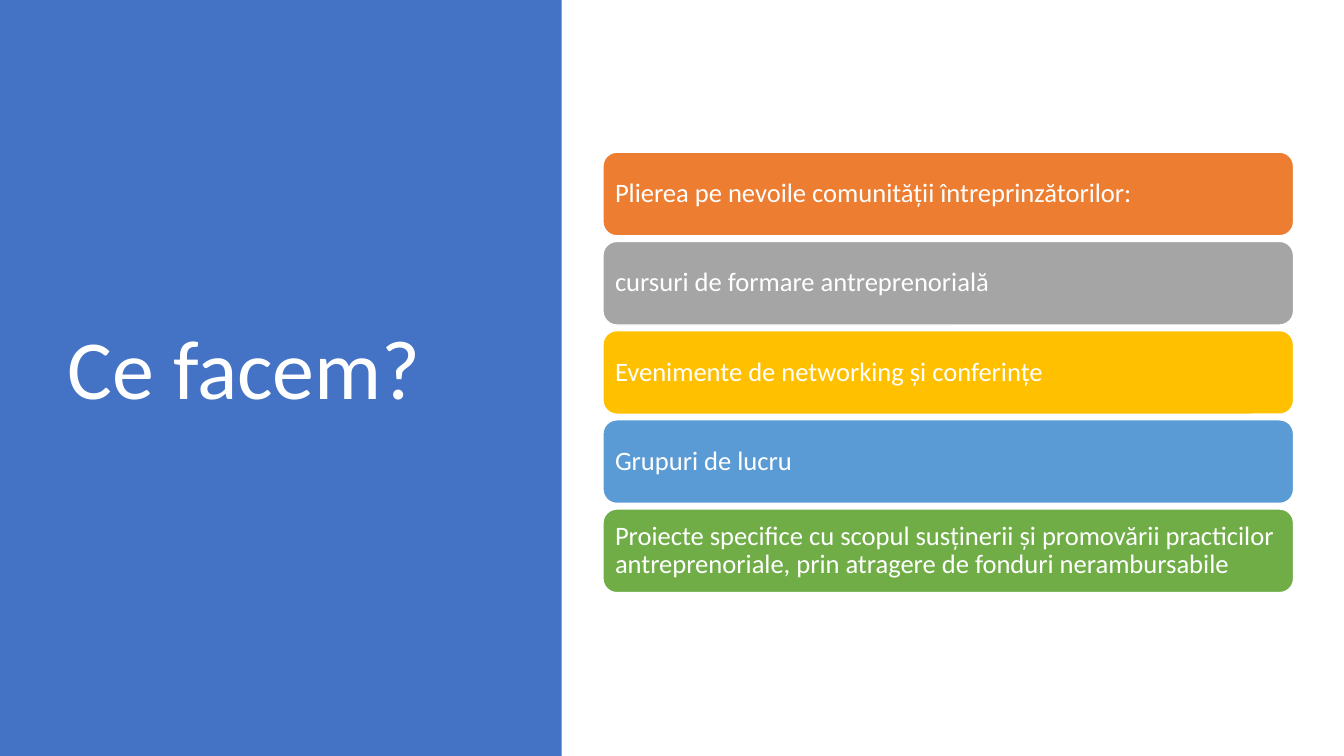
from dataclasses import dataclass

from pptx import Presentation
from pptx.dml.color import RGBColor
from pptx.enum.shapes import MSO_SHAPE
from pptx.enum.text import MSO_ANCHOR, MSO_AUTO_SIZE, PP_ALIGN
from pptx.util import Inches, Pt

BAR_LEFT, BAR_TOP, BAR_WIDTH, BAR_HEIGHT = 5.98, 1.51, 6.85, 0.83
BAR_GAP = 0.055
WHITE = "FFFFFF"


@dataclass
class Bar:
    text: str
    fill: str


BARS = [
    Bar("Plierea pe nevoile comunității întreprinzătorilor:", "ED7D31"),
    Bar("cursuri de formare antreprenorială", "A5A5A5"),
    Bar("Evenimente de networking și conferințe", "FFC000"),
    Bar("Grupuri de lucru", "5B9BD5"),
    Bar("Proiecte specifice cu scopul susținerii și promovării practicilor "
        "antreprenoriale, prin atragere de fonduri nerambursabile", "70AD47"),
]


def color(value: str) -> RGBColor:
    return RGBColor.from_string(value)


def set_text(sp, text: str, size: float, inset: dict[str, int]) -> None:
    """Write one white, left-aligned, vertically centred paragraph."""
    tf = sp.text_frame
    frame_format = {"word_wrap": True, "auto_size": MSO_AUTO_SIZE.NONE,
                    "vertical_anchor": MSO_ANCHOR.MIDDLE, **inset}
    for name, value in frame_format.items():
        setattr(tf, name, value)
    p = tf.paragraphs[0]
    p.alignment, p.line_spacing = PP_ALIGN.LEFT, 0.9
    r = p.add_run()
    r.text = text
    for name, value in {"name": "Calibri", "size": Pt(size)}.items():
        setattr(r.font, name, value)
    r.font.color.rgb = color(WHITE)


def add_block(s, kind: MSO_SHAPE, box: tuple[float, ...], fill: str):
    sp = s.shapes.add_shape(kind, *map(Inches, box))
    sp.shadow.inherit = False
    sp.fill.solid()
    sp.fill.fore_color.rgb = color(fill)
    sp.line.fill.background()
    return sp


def add_bar(s, index: int, bar: Bar) -> None:
    top = BAR_TOP + index * (BAR_HEIGHT + BAR_GAP)
    sp = add_block(s, MSO_SHAPE.ROUNDED_RECTANGLE,
                   (BAR_LEFT, top, BAR_WIDTH, BAR_HEIGHT), bar.fill)
    sp.line.color.rgb = color(WHITE)
    sp.line.width = Pt(1)
    sides = ("left", "top", "right", "bottom")
    set_text(sp, bar.text, 19, {f"margin_{side}": Inches(0.08) for side in sides})


def main() -> None:
    prs = Presentation()
    prs.slide_width, prs.slide_height = Inches(13.33), Inches(7.5)
    s = prs.slides.add_slide(prs.slide_layouts[5])

    # Left panel, behind the title
    panel = add_block(s, MSO_SHAPE.RECTANGLE, (0, 0, 5.57, 7.5), "4472C4")
    title = s.shapes.title
    title._element.addprevious(panel._element)

    # Title
    place = {"left": 0.57, "top": 0.68, "width": 4.16, "height": 6.02}
    for name, value in place.items():
        setattr(title, name, Inches(value))
    set_text(title, "Ce facem?", 60, {})

    # Activity bars
    for index, bar in enumerate(BARS):
        add_bar(s, index, bar)

    prs.save("out.pptx")


if __name__ == "__main__":
    main()
